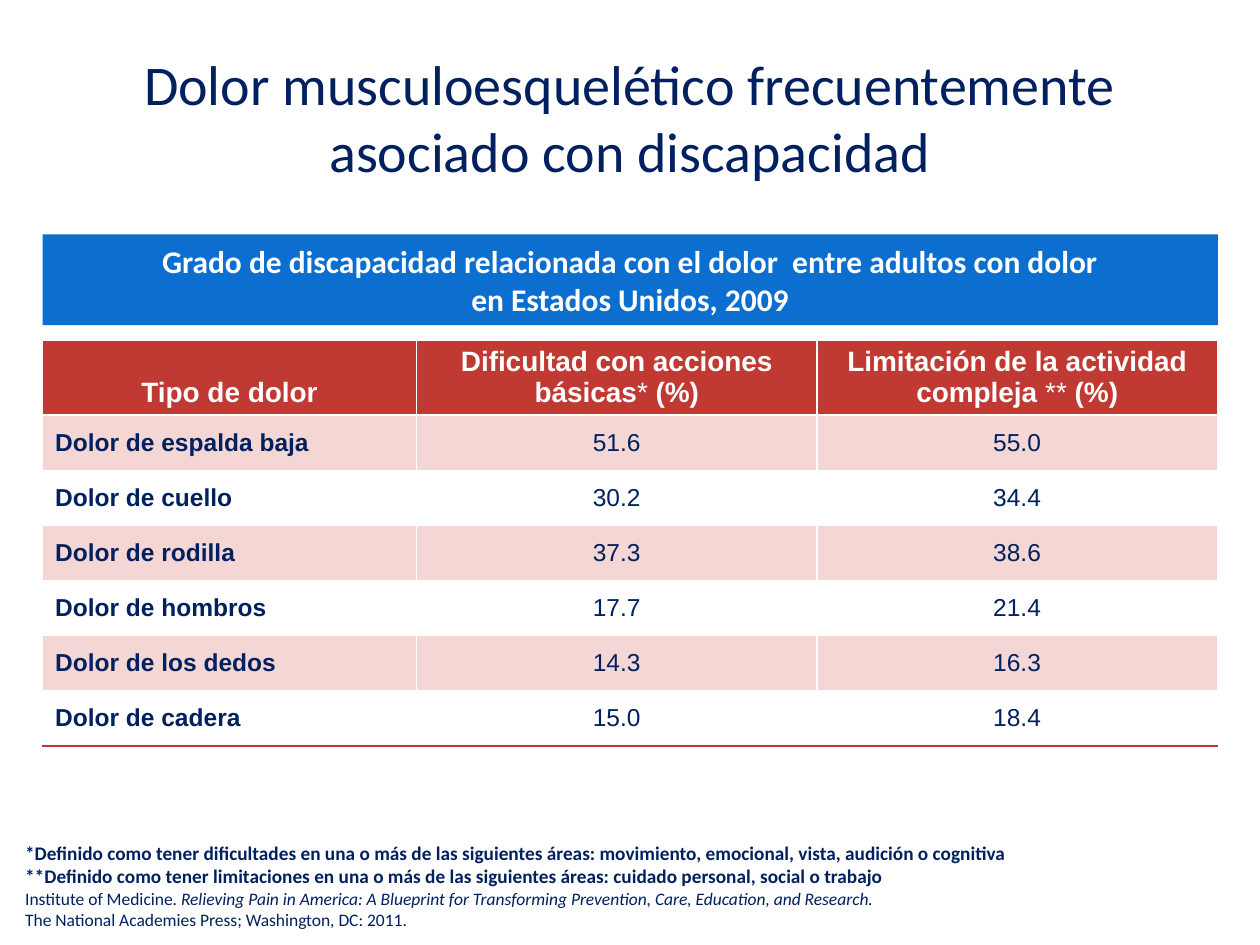
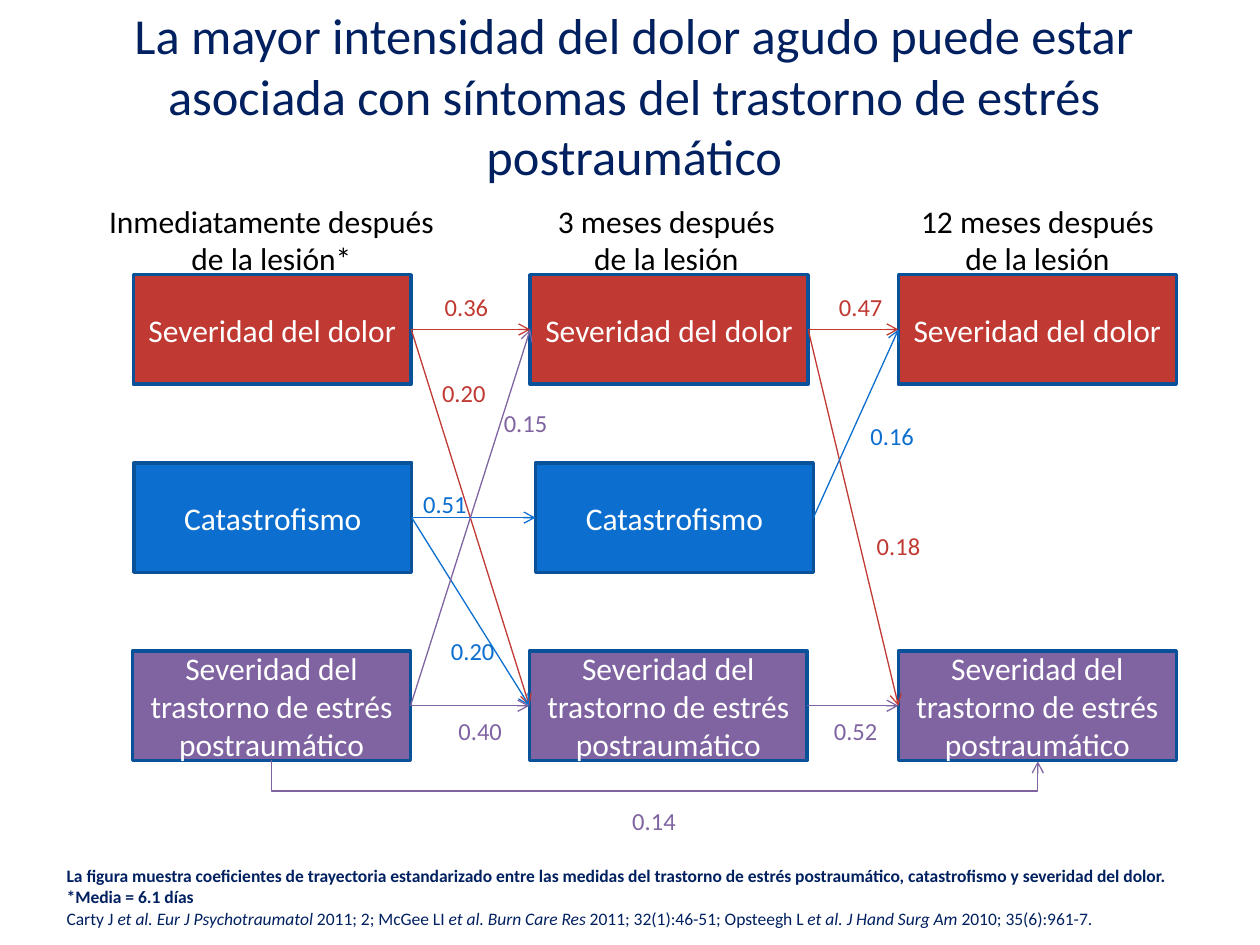
"""Build two slides on musculoskeletal pain, disability and post-traumatic stress."""
from copy import deepcopy

from pptx import Presentation
from pptx.dml.color import RGBColor
from pptx.enum.shapes import MSO_CONNECTOR as LINK, MSO_SHAPE as SHAPE
from pptx.enum.text import MSO_ANCHOR as ANCHOR, MSO_AUTO_SIZE as FIT, PP_ALIGN as ALIGN
from pptx.oxml.ns import qn
from pptx.oxml.xmlchemy import OxmlElement
from pptx.util import Pt

NAVY = RGBColor(0x00, 0x20, 0x60)
BLUE = RGBColor(0x0C, 0x6F, 0xCF)
EDGE = RGBColor(0x09, 0x52, 0x99)
RED = RGBColor(0xC0, 0x39, 0x32)
PINK = RGBColor(0xF4, 0xD6, 0xD4)
PURPLE = RGBColor(0x80, 0x64, 0xA2)
WHITE = RGBColor(0xFF, 0xFF, 0xFF)
BLACK = RGBColor(0x00, 0x00, 0x00)

BOLD, PLAIN, ITALIC = {"bold": True}, {"bold": False}, {"italic": True}
LEFT, RIGHT = 1, 3


class Deck:
    def __init__(self):
        self.prs = Presentation()
        self.prs.slide_width, self.prs.slide_height = Pt(720), Pt(540)
        self.slide = None

    def add_slide(self, title, at, size):
        self.slide = self.prs.slides.add_slide(self.prs.slide_layouts[5])
        holder = self.slide.shapes.title
        for name, value in zip(("left", "top", "width", "height"), at):
            setattr(holder, name, Pt(value))
        self.set_text(holder.text_frame, [[(title, {})]], size, NAVY, ALIGN.CENTER,
                      auto_size=FIT.NONE, vertical_anchor=ANCHOR.MIDDLE)

    def set_text(self, frame, paragraphs, size, color, align=ALIGN.LEFT, font="Calibri",
                 **layout):
        for name, value in layout.items():
            setattr(frame, name, value)
        for index, pieces in enumerate(paragraphs):
            paragraph = frame.paragraphs[0] if index == 0 else frame.add_paragraph()
            paragraph.alignment = align
            for text, changes in pieces:
                look = {"name": font, "size": Pt(size), **changes}
                for number, line in enumerate(text.split("\n")):
                    if number:
                        paragraph.add_line_break()
                        paragraph._p[-1].append(deepcopy(run._r.rPr))
                    run = paragraph.add_run()
                    run.text = line
                    run.font.color.rgb = color
                    for name, value in look.items():
                        setattr(run.font, name, value)

    def text(self, at, paragraphs, size, color, align=ALIGN.LEFT, **layout):
        frame = self.slide.shapes.add_textbox(*map(Pt, at)).text_frame
        self.set_text(frame, paragraphs, size, color, align,
                      **{"word_wrap": True, "auto_size": FIT.SHAPE_TO_FIT_TEXT, **layout})

    def box(self, at, text, fill, edge=None, changes=PLAIN):
        box = self.slide.shapes.add_shape(SHAPE.RECTANGLE, *map(Pt, at))
        box.shadow.inherit = False
        box.fill.solid()
        box.fill.fore_color.rgb = fill
        if edge is None:
            box.line.fill.background()
        else:
            box.line.color.rgb = edge
            box.line.width = Pt(2)
        self.set_text(box.text_frame, [[(text, changes)]], 18, WHITE, ALIGN.CENTER,
                      word_wrap=True, vertical_anchor=ANCHOR.MIDDLE)
        return box

    def finish_arrow(self, arrow, color):
        arrow.line.color.rgb = color
        arrow.line.width = Pt(0.75)
        tip = OxmlElement("a:tailEnd")
        tip.set("type", "arrow")
        arrow.line._get_or_add_ln().append(tip)
        arrow._element.spPr.append(OxmlElement("a:effectLst"))

    def arrow(self, origin, target, color):
        arrow = self.slide.shapes.add_connector(LINK.STRAIGHT, 0, 0, 0, 0)
        arrow.begin_connect(origin, RIGHT)
        arrow.end_connect(target, LEFT)
        self.finish_arrow(arrow, color)

    def arrow_below(self, start_x, end_x, y, drop, color):
        middle, half = (start_x + end_x) / 2, (end_x - start_x) / 2
        ends = (middle + 0.5, y - half, middle - 0.5, y + half)
        arrow = self.slide.shapes.add_connector(LINK.ELBOW, *map(Pt, ends))
        properties = arrow._element.spPr
        properties.find(qn("a:xfrm")).set("rot", str(270 * 60000))
        bend = OxmlElement("a:gd")
        bend.set("name", "adj1")
        bend.set("fmla", f"val {drop * 100000}")
        geometry = properties.find(qn("a:prstGeom"))
        geometry.get_or_add_avLst().append(bend)
        self.finish_arrow(arrow, color)

    def border(self, cell, side, color, width):
        line = OxmlElement(f"a:ln{side}")
        line.set("w", str(Pt(width)))
        fill, tone = OxmlElement("a:solidFill"), OxmlElement("a:srgbClr")
        tone.set("val", str(color))
        fill.append(tone)
        line.append(fill)
        cell._tc.get_or_add_tcPr().append(line)

    def table(self, at, widths, heights, header, rows):
        table = self.slide.shapes.add_table(len(rows) + 1, len(widths), *map(Pt, at)).table
        for column, width in zip(table.columns, widths):
            column.width = Pt(width)
        for row, height in zip(table.rows, heights):
            row.height = Pt(height)
        last_row, last_column = len(rows), len(widths) - 1
        for r, values in enumerate([header, *rows]):
            for c, value in enumerate(values):
                cell = table.cell(r, c)
                if c > 0:
                    self.border(cell, "L", WHITE, 0.75)
                if c < last_column:
                    self.border(cell, "R", WHITE, 0.75)
                if r > 0:
                    self.border(cell, "T", WHITE, 1.5 if r == 1 else 0.75)
                self.border(cell, "B", RED if r == last_row else WHITE,
                            1.5 if r in (0, last_row) else 0.75)
                if r and r % 2 == 0:
                    cell.fill.background()
                else:
                    cell.fill.solid()
                    cell.fill.fore_color.rgb = PINK if r else RED
                cell.vertical_anchor = ANCHOR.MIDDLE if r else ANCHOR.BOTTOM
                frame = cell.text_frame
                if r == 0:
                    self.set_text(frame, [value], 16, WHITE, ALIGN.CENTER, "Arial")
                elif c == 0:
                    self.set_text(frame, [[(value, BOLD)]], 14, NAVY, font="Arial")
                else:
                    cell.margin_right = Pt(100.8)
                    self.set_text(frame, [[(value, PLAIN)]], 14, NAVY, ALIGN.RIGHT, "Arial")


def disability_slide(deck):
    deck.add_slide("Dolor musculoesquelético frecuentemente asociado con discapacidad",
                   (36, 21.6, 648, 90), 32)
    deck.box((24.3, 134, 671.6, 51.8),
             "Grado de discapacidad relacionada con el dolor  entre adultos con dolor\n"
             "en Estados Unidos, 2009", BLUE, changes=BOLD)
    header = [
        [("Tipo de dolor", BOLD)],
        [("Dificultad con acciones básicas", BOLD), ("*", PLAIN), (" (%)", BOLD)],
        [("Limitación de la actividad compleja ", BOLD), ("** ", PLAIN), ("(%)", BOLD)],
    ]
    pains = [
        ("Dolor de espalda baja", "51.6", "55.0"),
        ("Dolor de cuello", "30.2", "34.4"),
        ("Dolor de rodilla", "37.3", "38.6"),
        ("Dolor de hombros", "17.7", "21.4"),
        ("Dolor de los dedos", "14.3", "16.3"),
        ("Dolor de cadera", "15.0", "18.4"),
    ]
    deck.table((24.3, 194.4, 671.4, 220), (213.8, 228.8, 228.8), [31] + [31.5] * 6,
               header, pains)
    deck.text((14.4, 480.2, 671.8, 51.1), [
        [("*Definido como tener dificultades en una o más de las siguientes áreas: "
          "movimiento, emocional, vista, audición o cognitiva", BOLD)],
        [("**Definido como tener limitaciones en una o más de las siguientes áreas: "
          "cuidado personal, social o trabajo", BOLD)],
        [("Institute of Medicine. ", {"size": Pt(10)}),
         ("Relieving Pain in America: A Blueprint for Transforming Prevention, Care, "
          "Education, and Research. \n", {"size": Pt(10), **ITALIC}),
         ("The National Academies Press; Washington, DC: 2011.", {"size": Pt(10)})],
    ], 11, NAVY, vertical_anchor=ANCHOR.BOTTOM,
        margin_left=0, margin_top=0, margin_right=0, margin_bottom=0)


def stress_slide(deck):
    deck.add_slide("La mayor intensidad del dolor agudo puede estar asociada con síntomas "
                   "del trastorno de estrés postraumático", (31, 9.4, 663, 90), 28.8)
    deck.text((31, 491, 652.3, 43.9), [
        [("La figura muestra coeficientes de trayectoria estandarizado entre las medidas del "
          "trastorno de estrés postraumático, catastrofismo y severidad del dolor.", BOLD)],
        [("*Media = 6.1 días", BOLD)],
        [("Carty J ", {}), ("et al. Eur J Psychotraumatol", ITALIC),
         (" 2011; 2; McGee LI ", {}), ("et al. Burn Care Res", ITALIC),
         (" 2011; 32(1):46-51; Opsteegh L ", {}), ("et al. J Hand Surg Am", ITALIC),
         (" 2010; 35(6):961-7.", {})],
    ], 10, NAVY)

    measures = {
        "dolor": ("Severidad del dolor", RED, 157, (76.2, 303, 513.4)),
        "catastrofismo": ("Catastrofismo", BLUE, 264.5, (76.5, 306, None)),
        "estrés": ("Severidad del trastorno de estrés postraumático", PURPLE, 372,
                   (75.8, 302.5, 513.4)),
    }
    boxes = {}
    for measure, (text, color, top, lefts) in measures.items():
        for visit, left in enumerate(lefts):
            if left is not None:
                boxes[measure, visit] = deck.box((left, top, 158.8, 62.6), text, color, EDGE)

    visits = [("Inmediatamente después\nde la lesión*", 54, 202.3),
              ("3 meses después\nde la lesión", 311, 139.7),
              ("12 meses después\nde la lesión", 518.4, 149)]
    for text, left, width in visits:
        deck.text((left, 111.6, width, 51.1), [[(text, {})]], 18, BLACK, ALIGN.CENTER,
                  word_wrap=False)

    effects = [
        ("dolor", 0, "dolor", "0.36", 247, 163.4),
        ("dolor", 0, "estrés", "0.20", 245.5, 212.4),
        ("catastrofismo", 0, "catastrofismo", "0.51", 234.7, 275.8),
        ("catastrofismo", 0, "estrés", "0.20", 250.6, 360),
        ("estrés", 0, "dolor", "0.15", 280.8, 229.7),
        ("estrés", 0, "estrés", "0.40", 254.9, 405.4),
        ("dolor", 1, "dolor", "0.47", 472.3, 163.4),
        ("dolor", 1, "estrés", "0.18", 493.9, 300.2),
        ("catastrofismo", 1, "dolor", "0.16", 490.3, 236.9),
        ("estrés", 1, "estrés", "0.52", 469.4, 405.4),
    ]
    labels = [("0.14", PURPLE, 354.2, 457.2)]
    for cause, visit, outcome, value, left, top in effects:
        color = measures[cause][1]
        deck.arrow(boxes[cause, visit], boxes[outcome, visit + 1], color)
        labels.append((value, color, left, top))
    deck.arrow_below(155.2, 593, 434.6, 18, PURPLE)
    for value, color, left, top in labels:
        deck.text((left, top, 39.6, 24.5), [[(value, {})]], 14, color, word_wrap=False)


def main():
    deck = Deck()
    disability_slide(deck)
    stress_slide(deck)
    deck.prs.save("out.pptx")


if __name__ == "__main__":
    main()
